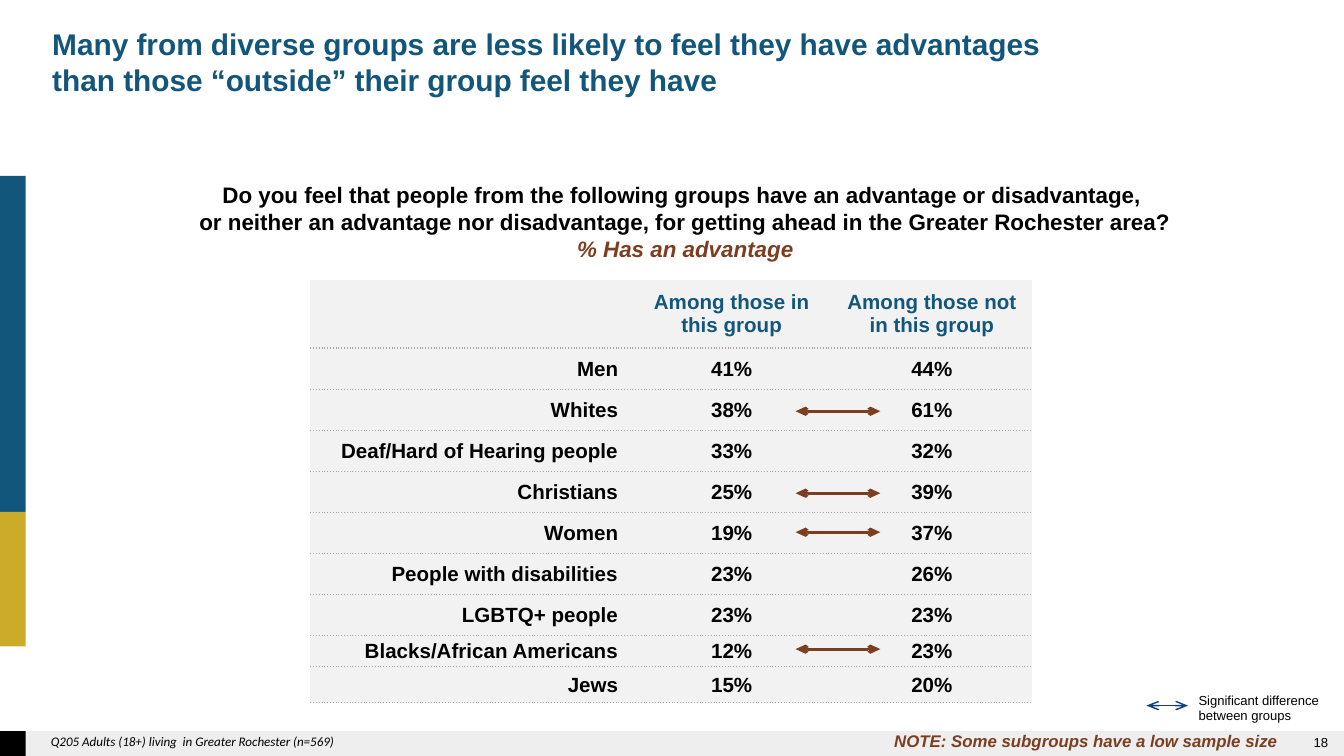
from lxml import etree
from pptx import Presentation
from pptx.dml.color import RGBColor
from pptx.enum import shapes, text
from pptx.oxml import ns, parse_xml
from pptx.util import Inches, Pt

BLUE, BROWN, BLACK, GOLD = "12567C", "7C3E20", "000000", "CCAB2B"
LEFT, CENTER, RIGHT = text.PP_ALIGN.LEFT, text.PP_ALIGN.CENTER, text.PP_ALIGN.RIGHT
MIDDLE = text.MSO_ANCHOR.MIDDLE


def rgb(value):
    return RGBColor.from_string(value)


def write(tf, content, size=7, color=BLACK, bold=False, italic=False,
          align=LEFT, font="Arial", first=True):
    p = tf.paragraphs[0] if first else tf.add_paragraph()
    p.alignment = align
    r = p.add_run()
    r.text = content
    r.font.name = font
    r.font.size = Pt(size)
    r.font.bold = bold
    r.font.italic = italic
    r.font.color.rgb = rgb(color)


prs = Presentation()
prs.slide_width = Inches(10)
prs.slide_height = prs.slide_width * 9 // 16
s = prs.slides.add_slide(prs.slide_layouts[6])

bars = [
    (5.44, 10, 0.19, "595959"),
    (1.31, 0.19, 2.5, BLUE),
    (3.81, 0.19, 1, GOLD),
    (5.44, 0.19, 0.19, BLACK),
]
for top, width, height, color in bars:
    sp = s.shapes.add_shape(shapes.MSO_SHAPE.RECTANGLE, 0, Inches(top), Inches(width), Inches(height))
    sp.shadow.inherit = False
    sp.fill.solid()
    sp.fill.fore_color.rgb = rgb(color)
    sp.line.fill.background()
    if color == "595959":
        clr = sp._element.spPr.find(".//" + ns.qn("a:srgbClr"))
        etree.SubElement(clr, ns.qn("a:alpha")).set("val", "10000")

title = dict(size=16, color=BLUE, bold=True)
question = dict(size=12, bold=True, align=CENTER)
boxes = [
    ((7.65, 5.44, 2.33, 0.17), [("18", dict(align=RIGHT))]),
    ((0.2, 1.3, 9.8, 0.71), [
        ("Do you feel that people from the following groups have an advantage or disadvantage, ", question),
        ("or neither an advantage nor disadvantage, for getting ahead in the Greater Rochester area?", question),
        ("% Has an advantage", dict(question, color=BROWN, italic=True)),
    ]),
    ((0.29, 0.14, 8.11, 0.63), [
        ("Many from diverse groups are less likely to feel they have advantages", title),
        ("than those “outside” their group feel they have", title),
    ]),
    ((0.28, 5.41, 6.58, 0.22), [
        ("Q205 Adults (18+) living  in Greater Rochester (n=569)", dict(font="Calibri", italic=True)),
    ]),
    ((8.82, 5.1, 1.17, 0.34), [("Significant difference between groups", {})]),
    ((6.54, 5.39, 3.06, 0.25), [
        ("NOTE: Some subgroups have a low sample size",
         dict(size=9, color=BROWN, bold=True, italic=True, align=RIGHT)),
    ]),
]
for place, lines in boxes:
    tf = s.shapes.add_textbox(*map(Inches, place)).text_frame
    tf.word_wrap = True
    if lines[0][0] == "18":
        tf.vertical_anchor = MIDDLE
    for i, (content, style) in enumerate(lines):
        write(tf, content, first=i == 0, **style)

rows = [
    ("", "Among those in this group", "Among those not in this group"),
    ("Men", "41%", "44%"),
    ("Whites", "38%", "61%"),
    ("Deaf/Hard of Hearing people", "33%", "32%"),
    ("Christians", "25%", "39%"),
    ("Women", "19%", "37%"),
    ("People with disabilities", "23%", "26%"),
    ("LGBTQ+ people", "23%", "23%"),
    ("Blacks/African Americans", "12%", "23%"),
    ("Jews", "15%", "20%"),
]
heights = [0.51] + [2.14 / 7] * 7 + [0.23, 0.27]
table = s.shapes.add_table(len(rows), 3, Inches(2.31), Inches(2.08), Inches(5.38), Inches(3.14)).table
table.first_row = table.horz_banding = False
table._tbl.tblPr[0].text = "{2D5ABB26-0587-4C30-8999-92F81FD0307C}"
for column, width in zip(table.columns, (2.39, 1.49, 1.49)):
    column.width = Inches(width)
for i, (row, height) in enumerate(zip(rows, heights)):
    table.rows[i].height = Inches(height)
    for j, content in enumerate(row):
        cell = table.cell(i, j)
        cell.vertical_anchor = MIDDLE
        if i:
            cell.margin_left = cell.margin_top = Inches(0.01)
            cell.margin_right = Inches(0.01 if j else 0.1)
            cell.margin_bottom = 0
        if content:
            write(cell.text_frame, content, size=11, bold=True, color=BLACK if i else BLUE,
                  align=CENTER if j else RIGHT)
        cell._tc.get_or_add_tcPr().append(parse_xml(
            f'<a:lnB {ns.nsdecls("a")} w="9525"><a:solidFill><a:srgbClr val="A6A6A6"/></a:solidFill>'
            '<a:prstDash val="sysDot"/></a:lnB>'))
        cell.fill.solid()
        cell.fill.fore_color.rgb = rgb("F2F2F2")

arrows = [(5.92, 6.55, y, BROWN, 1.5) for y in (3.06, 3.67, 3.96, 4.83)]
arrows.append((8.53, 8.84, 5.25, "12427C", 0.75))
for x1, x2, y, color, weight in arrows:
    sp = s.shapes.add_connector(shapes.MSO_CONNECTOR.STRAIGHT, Inches(x1), Inches(y), Inches(x2), Inches(y))
    sp.line.color.rgb = rgb(color)
    sp.line.width = Pt(weight)
    for tag in ("a:headEnd", "a:tailEnd"):
        end = etree.SubElement(sp.line._get_or_add_ln(), ns.qn(tag))
        end.set("type", "arrow")
        end.set("w", "sm")
    etree.SubElement(sp._element.spPr, ns.qn("a:effectLst"))

prs.save("out.pptx")
